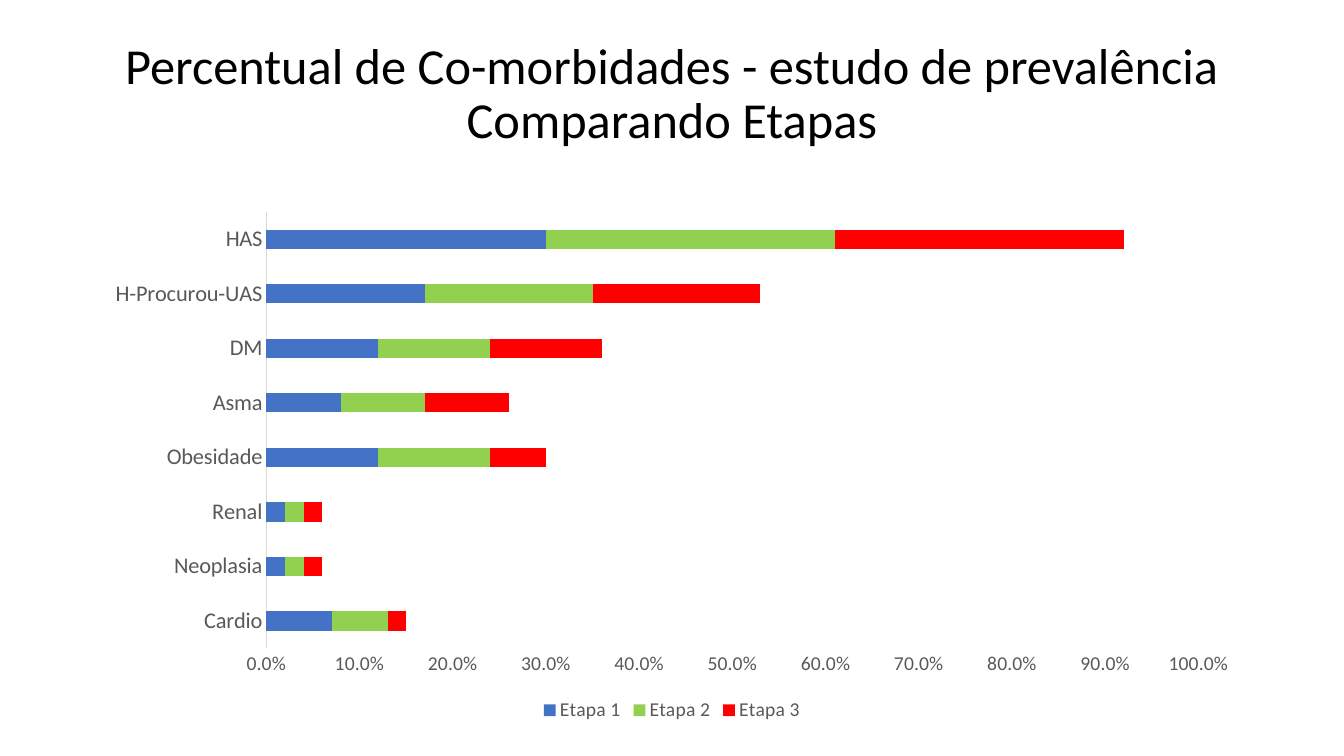
"""Build a slide with a stacked bar chart of co-morbidities by stage."""
from pptx import Presentation
from pptx.chart.data import CategoryChartData
from pptx.dml.color import RGBColor
from pptx.enum import chart as ch, text as tx
from pptx.util import Pt

TITLE = "Percentual de Co-morbidades - estudo de prevalência\vComparando Etapas"
CATS = ["Cardio", "Neoplasia", "Renal", "Obesidade", "Asma", "DM", "H-Procurou-UAS", "HAS"]
STAGES = {
    "Etapa 1": [0.07, 0.02, 0.02, 0.12, 0.08, 0.12, 0.17, 0.3],
    "Etapa 2": [0.06, 0.02, 0.02, 0.12, 0.09, 0.12, 0.18, 0.31],
    "Etapa 3": [0.02, 0.02, 0.02, 0.06, 0.09, 0.12, 0.18, 0.31],
}
THEME = {
    "font": "Calibri", "ink": "000000", "label": "595959", "line": "D9D9D9",
    "bars": ["4472C4", "92D050", "FF0000"],
    "title": 36, "cat": 16, "small": 14, "base": 10,
}
WIDE, HIGH = 960, 540
LEFT, TOP, SPLIT, END = 66, 39.6, 144, 518.8
SPAN = WIDE - 2 * LEFT


def style(font, size, color):
    font.name, font.size, font.bold = THEME["font"], Pt(size), False
    font.color.rgb = RGBColor.from_string(color)


def write(shape, words, size, color, align, low=3.6):
    frame = shape.text_frame
    frame.text = words
    frame.word_wrap = True
    frame.auto_size = tx.MSO_AUTO_SIZE.NONE
    frame.vertical_anchor = tx.MSO_ANCHOR.MIDDLE
    frame.margin_bottom = Pt(low)
    for para in frame.paragraphs:
        para.alignment, para.line_spacing = align, 0.9
        for run in para.runs:
            style(run.font, size, color)


def place(shape, left, top, width, height):
    shape.left, shape.top = Pt(left), Pt(top)
    shape.width, shape.height = Pt(width), Pt(height)


def plot(slide):
    data = CategoryChartData(number_format="###0.0%")
    data.categories = CATS
    for name, vals in STAGES.items():
        data.add_series(name, vals)
    box = [Pt(n) for n in (LEFT, SPLIT, SPAN, END - SPLIT)]
    chart = slide.shapes.add_chart(ch.XL_CHART_TYPE.BAR_STACKED, *box, data).chart
    style(chart.font, THEME["base"], THEME["ink"])
    chart.has_title = False
    chart.has_legend = True
    chart.legend.position = ch.XL_LEGEND_POSITION.BOTTOM
    chart.legend.include_in_layout = False
    style(chart.legend.font, THEME["small"], THEME["label"])

    bars = chart.plots[0]
    bars.gap_width, bars.overlap, bars.vary_by_categories = 182, 100, False
    for series, color in zip(bars.series, THEME["bars"]):
        series.format.fill.solid()
        series.format.fill.fore_color.rgb = RGBColor.from_string(color)
        series.invert_if_negative = False

    cat, val = chart.category_axis, chart.value_axis
    for axis, size in ((cat, THEME["cat"]), (val, THEME["small"])):
        axis.has_major_gridlines = False
        axis.major_tick_mark = axis.minor_tick_mark = ch.XL_TICK_MARK.NONE
        style(axis.tick_labels.font, size, THEME["label"])
    cat.format.line.width = Pt(0.75)
    cat.format.line.color.rgb = RGBColor.from_string(THEME["line"])
    val.format.line.fill.background()
    val.minimum_scale, val.maximum_scale, val.major_unit = 0, 1, 0.1
    val.tick_labels.number_format = "###0.0%"
    val.tick_labels.number_format_is_linked = False


def main():
    deck = Presentation()
    deck.slide_width, deck.slide_height = Pt(WIDE), Pt(HIGH)
    slide = deck.slides.add_slide(deck.slide_layouts[5])
    title = slide.shapes.title
    place(title, LEFT, TOP, SPAN, SPLIT - TOP)
    write(title, TITLE, size=THEME["title"], color=THEME["ink"],
          align=tx.PP_ALIGN.CENTER, low=51.6)
    plot(slide)
    deck.save("out.pptx")


if __name__ == "__main__":
    main()
